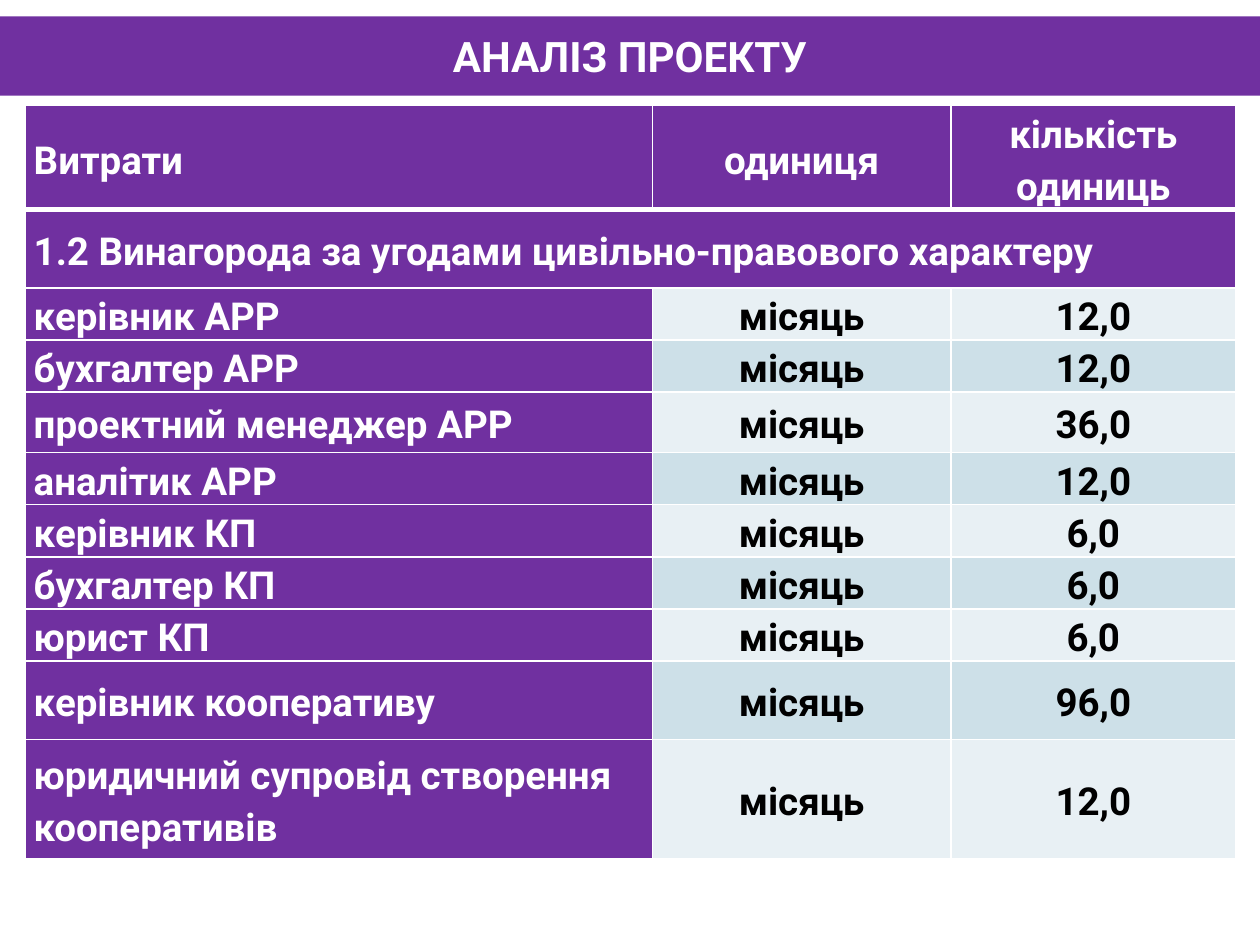
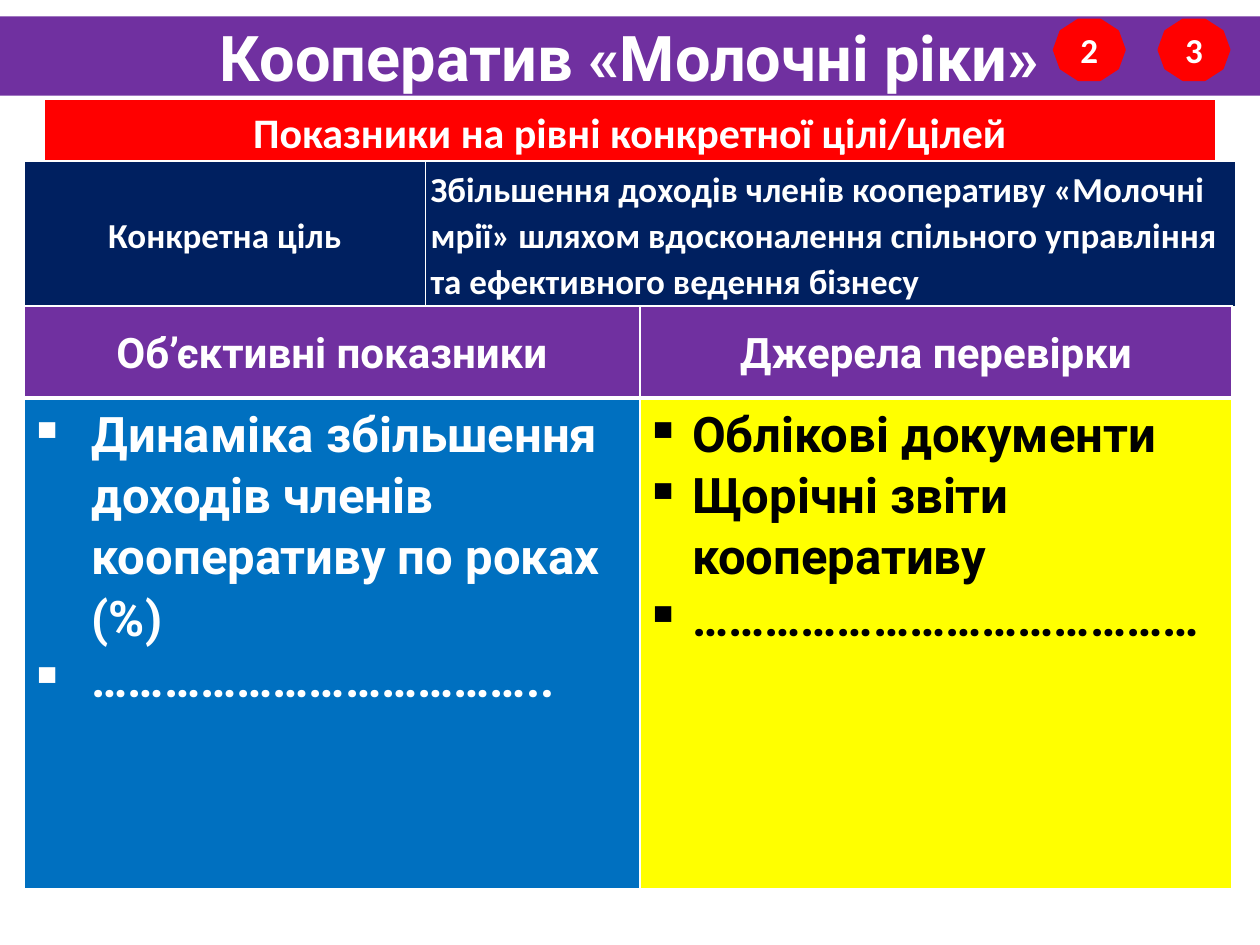
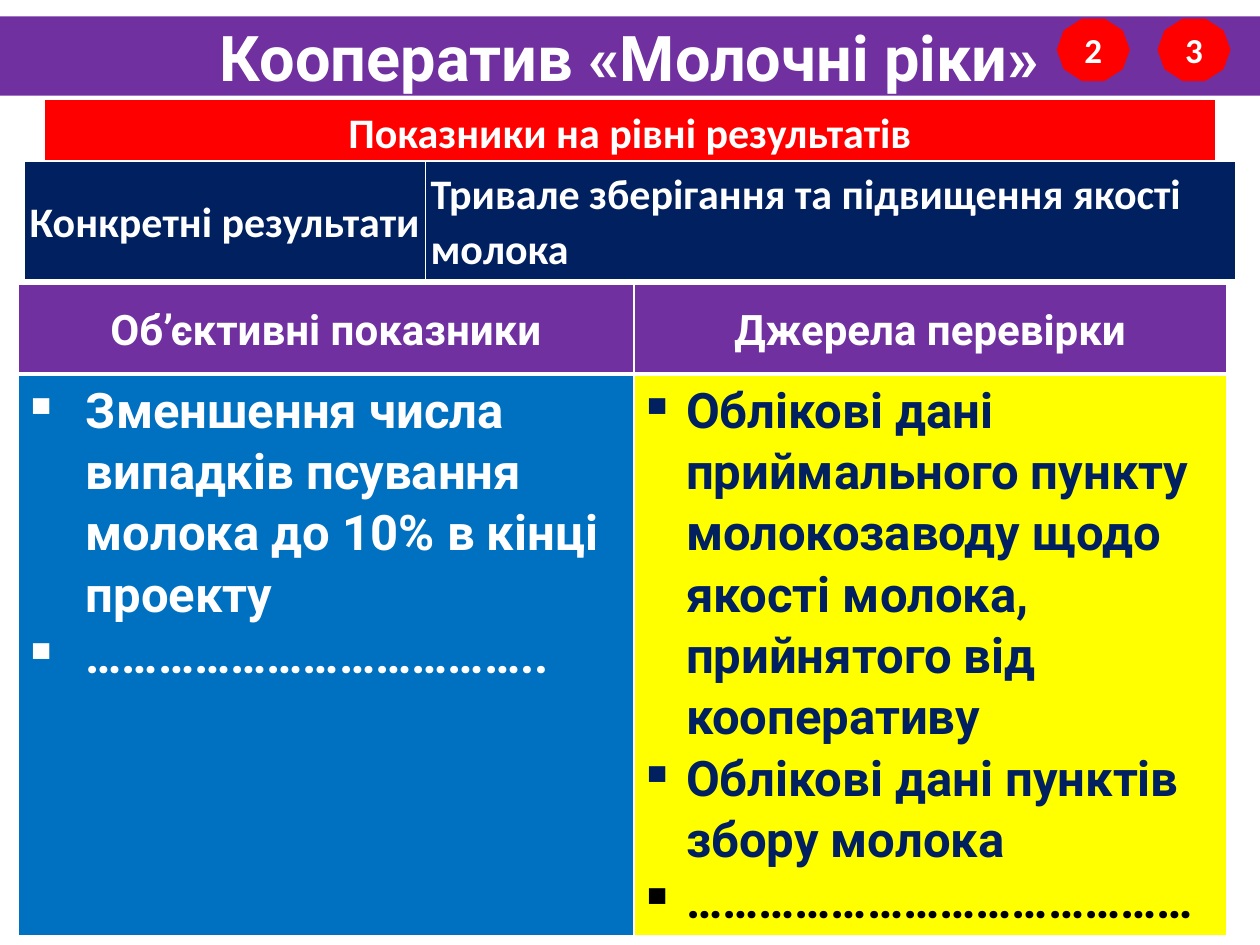
from dataclasses import dataclass
from typing import NamedTuple

from lxml.etree import SubElement
from pptx import Presentation
from pptx.dml.color import RGBColor as RGB
from pptx.enum.shapes import MSO_SHAPE as SHAPE
from pptx.enum.text import MSO_ANCHOR as ANCHOR, PP_ALIGN as ALIGN
from pptx.oxml import parse_xml
from pptx.oxml.ns import nsdecls, qn
from pptx.util import Cm, Pt


# Theme
@dataclass(frozen=True)
class Theme:
    purple: str = "7030A0"
    navy: str = "002060"
    red: str = "FF0000"
    blue: str = "0070C0"
    yellow: str = "FFFF00"
    white: str = "FFFFFF"
    black: str = "000000"
    bands: tuple[str, str] = ("E8F0F4", "CDE0E8")
    heading: str = "Roboto"
    body: str = "Calibri"
    title_size: int = 24
    coop_size: int = 36
    cost_size: int = 22
    label_size: int = 24
    small_size: int = 20
    bullet_size: int = 28
    thin: int = 1
    thick: int = 3


T = Theme()


class Font(NamedTuple):
    name: str
    size: int
    color: str = T.white


class Para(NamedTuple):
    text: str
    color: str | None = None


@dataclass(frozen=True)
class Cell:
    paras: tuple[Para, ...]
    fill: str
    font: Font
    align: ALIGN = ALIGN.CENTER
    anchor: ANCHOR = ANCHOR.MIDDLE
    bullet_indent: float = 0
    span: int = 1


@dataclass(frozen=True)
class Grid:
    left: float
    top: float
    cols: tuple[float, ...]
    rows: tuple[float, ...]
    margins: tuple[float, float]  # horizontal, vertical
    spacing: float = 1.07


@dataclass(frozen=True)
class CoopSlide:
    level: str
    goal_label: str
    goal: str
    goal_size: int
    goal_height: float
    matrix_left: float
    matrix_top: float
    matrix_rows: tuple[float, float]
    indicators: tuple[Para, ...]
    sources: tuple[Para, ...]
    badge_left: float


# Text and shapes
def add_run(p, text: str, font: Font) -> None:
    r = p.add_run()
    r.text = text
    r.font.name, r.font.size, r.font.bold = font.name, Pt(font.size), True
    r.font.color.rgb = RGB.from_string(font.color)


def add_label(s, kind: SHAPE, box: tuple[float, ...], fill: str,
              text: str, font: Font, line: str | None = None) -> None:
    sp = s.shapes.add_shape(kind, *(Cm(v) for v in box))
    sp.shadow.inherit = False
    sp.fill.solid()
    sp.fill.fore_color.rgb = RGB.from_string(fill)
    if line:
        sp.line.color.rgb = RGB.from_string(line)
        sp.line.width = Pt(2)
    else:
        sp.line.fill.background()
    tf = sp.text_frame
    tf.word_wrap = True
    tf.vertical_anchor = ANCHOR.MIDDLE
    tf.margin_left = tf.margin_right = tf.margin_top = tf.margin_bottom = 0
    p = tf.paragraphs[0]
    p.alignment = ALIGN.CENTER
    add_run(p, text, font)


def add_title(s, text: str, size: int) -> None:
    add_label(s, SHAPE.RECTANGLE, (0, 0.33, 25.4, 1.6), T.purple, text, Font(T.heading, size))


# Tables
def set_bullet(p, indent: float) -> None:
    pPr = p._p.get_or_add_pPr()
    pPr.set("marL", str(Cm(indent)))
    pPr.set("indent", str(-Cm(indent)))
    SubElement(pPr, qn("a:buChar")).set("char", "▪")


def set_borders(cell, row: int) -> None:
    """White rules, thick under the first row."""
    widths = {"L": T.thin, "R": T.thin,
              "T": T.thick if row == 1 else T.thin,
              "B": T.thick if row == 0 else T.thin}
    tcPr = cell._tc.get_or_add_tcPr()
    for i, (side, width) in enumerate(widths.items()):
        tcPr.insert(i, parse_xml(
            f'<a:ln{side} {nsdecls("a")} w="{Pt(width)}"><a:solidFill>'
            f'<a:srgbClr val="{T.white}"/></a:solidFill></a:ln{side}>'))


def fill_cell(cell, data: Cell, grid: Grid, row: int) -> None:
    cell.fill.solid()
    cell.fill.fore_color.rgb = RGB.from_string(data.fill)
    set_borders(cell, row)
    cell.vertical_anchor = data.anchor
    cell.margin_left = cell.margin_right = Cm(grid.margins[0])
    cell.margin_top = cell.margin_bottom = Cm(grid.margins[1])
    tf = cell.text_frame
    for i, para in enumerate(data.paras):
        p = tf.add_paragraph() if i else tf.paragraphs[0]
        p.alignment = data.align
        p.line_spacing = grid.spacing
        if data.bullet_indent:
            set_bullet(p, data.bullet_indent)
        add_run(p, para.text, data.font._replace(color=para.color or data.font.color))


def add_grid(s, grid: Grid, rows: list[list[Cell]]) -> None:
    frame = s.shapes.add_table(len(grid.rows), len(grid.cols), Cm(grid.left), Cm(grid.top),
                               Cm(sum(grid.cols)), Cm(sum(grid.rows)))
    table = frame.table
    table.first_row = table.horz_banding = False
    for col, width in zip(table.columns, grid.cols):
        col.width = Cm(width)
    for row, height in zip(table.rows, grid.rows):
        row.height = Cm(height)
    for i, row in enumerate(rows):
        for j, data in enumerate(row):
            cell = table.cell(i, j)
            if data.span > 1:
                cell.merge(table.cell(i, j + data.span - 1))
            fill_cell(cell, data, grid, i)


# Cost analysis slide
COST_HEADER = ("Витрати", "одиниця", "кількість одиниць")
COST_SECTION = "1.2 Винагорода за угодами цивільно-правового характеру"
COST_UNIT = "місяць"
COSTS = (
    ("керівник АРР", "12,0"),
    ("бухгалтер АРР", "12,0"),
    ("проектний менеджер АРР", "36,0"),
    ("аналітик АРР", "12,0"),
    ("керівник КП", "6,0"),
    ("бухгалтер КП", "6,0"),
    ("юрист КП", "6,0"),
    ("керівник кооперативу", "96,0"),
    ("юридичний супровід створення кооперативів", "12,0"),
)
COST_GRID = Grid(0.5, 2.13, (12.65, 6.02, 5.74),
                 (2.08, 1.58, 1.05, 1.05, 1.22, *[1.05] * 4, 1.58, 2.4), (0.18, 0), 1.15)


def cost_cell(text: str, fill: str = T.purple, color: str = T.white,
              align: ALIGN = ALIGN.CENTER, span: int = 1) -> Cell:
    return Cell((Para(text),), fill, Font(T.heading, T.cost_size, color), align, span=span)


def build_costs(s) -> None:
    add_title(s, "АНАЛІЗ ПРОЕКТУ", T.title_size)
    name, *heads = COST_HEADER
    rows = [[cost_cell(name, align=ALIGN.LEFT), *map(cost_cell, heads)],
            [cost_cell(COST_SECTION, align=ALIGN.LEFT, span=3)]]
    for i, (item, amount) in enumerate(COSTS):
        values = [cost_cell(v, T.bands[i % 2], T.black) for v in (COST_UNIT, amount)]
        rows.append([cost_cell(item, align=ALIGN.LEFT), *values])
    add_grid(s, COST_GRID, rows)


# Cooperative slides
MATRIX_HEADER = ("Об’єктивні показники", "Джерела перевірки")
LEFT_DOTS = Para("………………………………..")
RIGHT_DOTS = Para("……………………………………", T.black)
TIGHT = (0.1, 0.1)

COOP_SLIDES = (
    CoopSlide(
        "Показники на рівні конкретної цілі/цілей", "Конкретна ціль",
        "Збільшення доходів членів кооперативу «Молочні мрії» шляхом вдосконалення "
        "спільного управління та ефективного ведення бізнесу",
        T.small_size, 2.92, 0.48, 6.17, (1.85, 9.9),
        (Para("Динаміка збільшення доходів членів кооперативу по роках (%)"), LEFT_DOTS),
        (Para("Облікові документи", T.black), Para("Щорічні звіти кооперативу", T.black),
         RIGHT_DOTS),
        21.26),
    CoopSlide(
        "Показники на рівні результатів", "Конкретні результати",
        "Тривале зберігання та підвищення якості молока",
        T.label_size, 2.34, 0.36, 5.74, (1.8, 11.2),
        (Para("Зменшення числа випадків псування молока до 10% в кінці проекту"), LEFT_DOTS),
        (Para("Облікові дані приймального пункту молокозаводу щодо якості молока, "
              "прийнятого від кооперативу", T.navy),
         Para("Облікові дані пунктів збору молока", T.navy), RIGHT_DOTS),
        21.34),
)


def build_coop(s, d: CoopSlide) -> None:
    add_title(s, "Кооператив «Молочні ріки»", T.coop_size)

    # Level banner and goal
    add_grid(s, Grid(0.89, 2.01, (23.62,), (1.24,), TIGHT),
             [[Cell((Para(d.level),), T.red, Font(T.body, T.label_size), anchor=ANCHOR.TOP)]])
    goal_font = Font(T.body, d.goal_size)
    add_grid(s, Grid(0.48, 3.25, (8.1, 16.33), (d.goal_height,), TIGHT),
             [[Cell((Para(d.goal_label),), T.navy, goal_font),
               Cell((Para(d.goal),), T.navy, goal_font, ALIGN.LEFT, ANCHOR.TOP)]])

    # Indicators and their sources
    head_font, list_font = (Font(T.heading, size) for size in (T.label_size, T.bullet_size))
    lists = ((d.indicators, T.blue, 1.27), (d.sources, T.yellow, 0.95))
    add_grid(s, Grid(d.matrix_left, d.matrix_top, (12.42, 11.94), d.matrix_rows, TIGHT),
             [[Cell((Para(text),), T.purple, head_font) for text in MATRIX_HEADER],
              [Cell(paras, fill, list_font, ALIGN.LEFT, ANCHOR.TOP, indent)
               for paras, fill, indent in lists]])

    # Number badges
    for left, number in ((d.badge_left, "2"), (23.37, "3")):
        add_label(s, SHAPE.DECAGON, (left, 0.41, 1.4, 1.19), T.red, number,
                  Font(T.body, T.small_size), T.red)


def main() -> None:
    prs = Presentation()
    prs.slide_width, prs.slide_height = Cm(25.4), Cm(19.05)
    blank = prs.slide_layouts[6]
    build_costs(prs.slides.add_slide(blank))
    for data in COOP_SLIDES:
        build_coop(prs.slides.add_slide(blank), data)
    prs.save("out.pptx")


if __name__ == "__main__":
    main()
